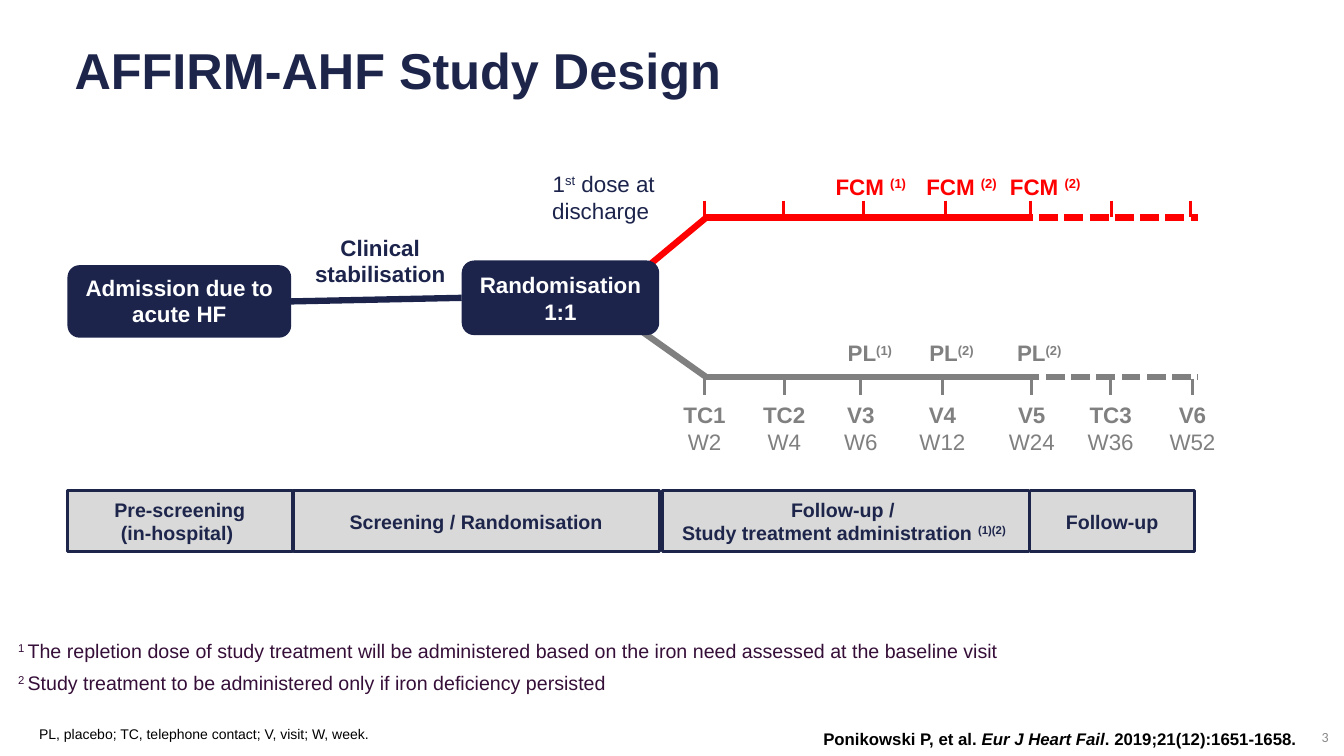
from dataclasses import dataclass, field
from typing import Any, NamedTuple

from lxml.etree import SubElement
from pptx import Presentation
from pptx.dml.color import RGBColor
from pptx.enum.dml import MSO_LINE
from pptx.enum.shapes import MSO_CONNECTOR, MSO_SHAPE
from pptx.enum.text import MSO_ANCHOR, MSO_AUTO_SIZE, PP_ALIGN
from pptx.oxml.ns import qn
from pptx.util import Pt


@dataclass(frozen=True)
class Theme:
    navy: str = "1C244C"
    heading: str = "1D254B"
    red: str = "FF0000"
    grey: str = "808080"
    pale: str = "D9D9D9"
    plum: str = "360F39"
    number: str = "898989"
    black: str = "000000"
    white: str = "FFFFFF"
    font: str = "Arial"
    number_font: str = "Calibri"
    title: float = 36
    body: float = 16
    phase: float = 14
    reference: float = 12
    small: float = 10


THEME = Theme()


class Span(NamedTuple):
    text: str
    changes: dict[str, Any] = {}
    raised: bool = False


class Area(NamedTuple):
    left: float
    top: float
    width: float
    height: float


@dataclass
class Style:
    size: float = THEME.body
    color: str = THEME.navy
    bold: bool = False
    font: str = THEME.font
    align: PP_ALIGN = PP_ALIGN.LEFT
    anchor: MSO_ANCHOR = MSO_ANCHOR.TOP
    margins: tuple[float, float] = (7.2, 3.6)
    after: float = 0


@dataclass
class Block:
    area: Area
    paragraphs: list[list[Span]]
    style: Style = field(default_factory=Style)
    shape: Any = None
    fill: str | None = None
    outline: str | None = None


class Visit(NamedTuple):
    name: str
    week: str
    red_x: float
    grey_x: float


class Arm(NamedTuple):
    color: str
    branch: tuple[float, float]
    axis_y: float
    split_x: float
    tick: tuple[float, float]
    ticks: list[float]
    dose: str
    dose_top: float
    dose_lefts: tuple[float, ...]


def apply(target: Any, values: dict[str, Any]) -> None:
    for name, value in values.items():
        setattr(target, name, value)


def write(box: Any, paragraphs: list[list[Span]], style: Style) -> None:
    frame = box.text_frame
    side, edge = (Pt(margin) for margin in style.margins)
    apply(frame, {"word_wrap": True, "auto_size": MSO_AUTO_SIZE.NONE,
                  "vertical_anchor": style.anchor, "margin_left": side,
                  "margin_right": side, "margin_top": edge, "margin_bottom": edge})
    for index, spans in enumerate(paragraphs):
        para = frame.add_paragraph() if index else frame.paragraphs[0]
        apply(para, {"alignment": style.align, "space_before": Pt(0),
                     "space_after": Pt(style.after)})
        for span in spans:
            for row, text in enumerate(span.text.split("\n")):
                if row:
                    para.add_line_break()
                    SubElement(para._p[-1], qn("a:rPr"), sz=str(int(style.size * 100)))
                if not text:
                    continue
                run = para.add_run()
                run.text = text
                apply(run.font, {"name": style.font, "size": Pt(style.size),
                                 "bold": style.bold, **span.changes})
                run.font.color.rgb = RGBColor.from_string(style.color)
                if span.raised:
                    run._r.get_or_add_rPr().set("baseline", "30000")


def draw_block(page: Any, block: Block) -> Any:
    place = [Pt(value) for value in block.area]
    if block.shape is None:
        box = page.shapes.add_textbox(*place)
    else:
        box = page.shapes.add_shape(block.shape, *place)
        box.shadow.inherit = False
        box.fill.solid()
        box.fill.fore_color.rgb = RGBColor.from_string(block.fill)
        if block.outline:
            box.line.color.rgb = RGBColor.from_string(block.outline)
            box.line.width = Pt(2)
        else:
            box.line.fill.background()
    write(box, block.paragraphs, block.style)
    return box


def draw_line(page: Any, start: tuple[float, float], end: tuple[float, float],
              color: str, width: float = 4.5, dashed: bool = False) -> Any:
    line = page.shapes.add_connector(
        MSO_CONNECTOR.STRAIGHT, *(Pt(value) for value in (*start, *end)))
    line.line.color.rgb = RGBColor.from_string(color)
    line.line.width = Pt(width)
    if dashed:
        line.line.dash_style = MSO_LINE.SQUARE_DOT
    SubElement(line._element.spPr, qn("a:effectLst"))
    return line


def draw_arm(page: Any, arm: Arm) -> None:
    bend_x, end_x = 503.5, 855.4
    bend, split = (bend_x, arm.axis_y), (arm.split_x, arm.axis_y)
    draw_line(page, arm.branch, (bend_x + 1, arm.axis_y), arm.color)
    draw_line(page, bend, split, arm.color)
    draw_line(page, split, (end_x, arm.axis_y), arm.color, dashed=True)
    for x in arm.ticks:
        draw_line(page, (x, arm.tick[0]), (x, arm.tick[1]), arm.color, 2.25)
    style = Style(color=arm.color, bold=True, margins=(0, 0))
    for left, note in zip(arm.dose_lefts, ("(1)", "(2)", "(2)")):
        draw_block(page, Block(Area(left, arm.dose_top, 60, 19.4),
                               [[Span(arm.dose), Span(note, raised=True)]], style))


VISITS = [
    Visit("TC1", "W2", 503.3, 503.3), Visit("TC2", "W4", 559.4, 560.2),
    Visit("V3", "W6", 617, 614.9), Visit("V4", "W12", 675.4, 673.2),
    Visit("V5", "W24", 735.8, 737), Visit("TC3", "W36", 794.2, 793.4),
    Visit("V6", "W52", 850.3, 851.8),
]
ARMS = [
    Arm(THEME.grey, (446.4, 228.2), 269.4, 729, (270.7, 282),
        [visit.grey_x for visit in VISITS], "PL", 242.6, (605.5, 663.8, 726.5)),
    Arm(THEME.red, (446.4, 203.8), 155.4, 724.3, (143.3, 154.8),
        [visit.red_x for visit in VISITS], "FCM ", 123.8, (596.9, 661.7, 721.4)),
]
CENTRED = Style(bold=True, align=PP_ALIGN.CENTER)
BOX = Style(color=THEME.white, bold=True, align=PP_ALIGN.CENTER)
PHASE = Style(THEME.phase, THEME.heading, True, align=PP_ALIGN.CENTER,
              anchor=MSO_ANCHOR.MIDDLE, margins=(3, 3.6))
PHASES = [
    (48.2, 160.6, [Span("Pre-screening\n(in-hospital) ")]),
    (209.5, 261.4, [Span("Screening / Randomisation")]),
    (473, 262.1, [Span("Follow-up / \nStudy treatment administration "),
                  Span("(1)(2) ", raised=True)]),
    (735.8, 117.4, [Span("Follow-up")]),
]
NOTES = [
    Block(Area(375.1, 118.1, 112.3, 46.8),
          [[Span("1"), Span("st", raised=True), Span(" dose at discharge ")]],
          Style(align=PP_ALIGN.CENTER)),
    Block(Area(5.8, 452.9, 718.6, 47.5), [
        [Span("1 ", raised=True), Span("The repletion dose of study treatment will be "
         "administered based on the iron need assessed at the baseline visit")],
        [Span("2 ", raised=True),
         Span("Study treatment to be administered only if iron deficiency persisted")],
    ], Style(THEME.phase, THEME.plum, after=6)),
    Block(Area(581, 517, 358.6, 21.6),
          [[Span("Ponikowski P, et al. "), Span("Eur J Heart Fail", {"italic": True}),
            Span(". 2019;21(12):1651-1658.")]],
          Style(THEME.reference, THEME.black, True)),
    Block(Area(867.6, 517, 88.6, 18), [[Span("3")]],
          Style(THEME.small, THEME.number, font=THEME.number_font,
                align=PP_ALIGN.RIGHT, anchor=MSO_ANCHOR.MIDDLE)),
    Block(Area(20.9, 514.1, 520, 19.4),
          [[Span("PL, placebo; TC, telephone contact; V, visit; W, week.")]],
          Style(THEME.small, THEME.black, anchor=MSO_ANCHOR.BOTTOM)),
]


def main() -> None:
    deck = Presentation()
    deck.slide_width, deck.slide_height = Pt(960), Pt(540)
    page = deck.slides.add_slide(deck.slide_layouts[5])

    # Title
    title = page.shapes.title
    apply(title, dict(zip(("left", "top", "width", "height"),
                          (Pt(46.1), Pt(24.5), Pt(735.8), Pt(50)))))
    write(title, [[Span("AFFIRM-AHF Study Design")]],
          Style(THEME.title, THEME.heading, True))

    # Treatment arms, under the boxes they start from
    for arm in ARMS:
        draw_arm(page, arm)
    for visit in VISITS:
        draw_block(page, Block(
            Area(visit.grey_x - 25, 283, 50, 46.8),
            [[Span(visit.name + "\n"), Span(visit.week, {"bold": False})]],
            Style(color=THEME.grey, bold=True, align=PP_ALIGN.CENTER, margins=(3, 3.6))))

    # Admission to randomisation
    admission = draw_block(page, Block(
        Area(48.2, 189.4, 159.8, 51.8), [[Span("Admission due to acute HF")]],
        BOX, MSO_SHAPE.ROUNDED_RECTANGLE, THEME.navy))
    randomisation = draw_block(page, Block(
        Area(329.8, 186.1, 141.1, 53.3), [[Span("Randomisation 1:1")]],
        Style(color=THEME.white, bold=True, align=PP_ALIGN.CENTER,
              anchor=MSO_ANCHOR.MIDDLE, margins=(3, 3)),
        MSO_SHAPE.ROUNDED_RECTANGLE, THEME.navy))
    link = draw_line(page, (208, 215), (329.8, 213), THEME.navy)
    link.begin_connect(admission, 3)
    link.end_connect(randomisation, 1)
    draw_block(page, Block(Area(214.6, 163.4, 114, 46.1),
                           [[Span("Clinical stabilisation")]], CENTRED))

    # Study phases
    for left, width, spans in PHASES:
        draw_block(page, Block(Area(left, 350.6, width, 43.4), [spans], PHASE,
                               MSO_SHAPE.RECTANGLE, THEME.pale, THEME.heading))

    # First dose, footnotes, reference and slide number
    for note in NOTES:
        draw_block(page, note)

    deck.save("out.pptx")


if __name__ == "__main__":
    main()
